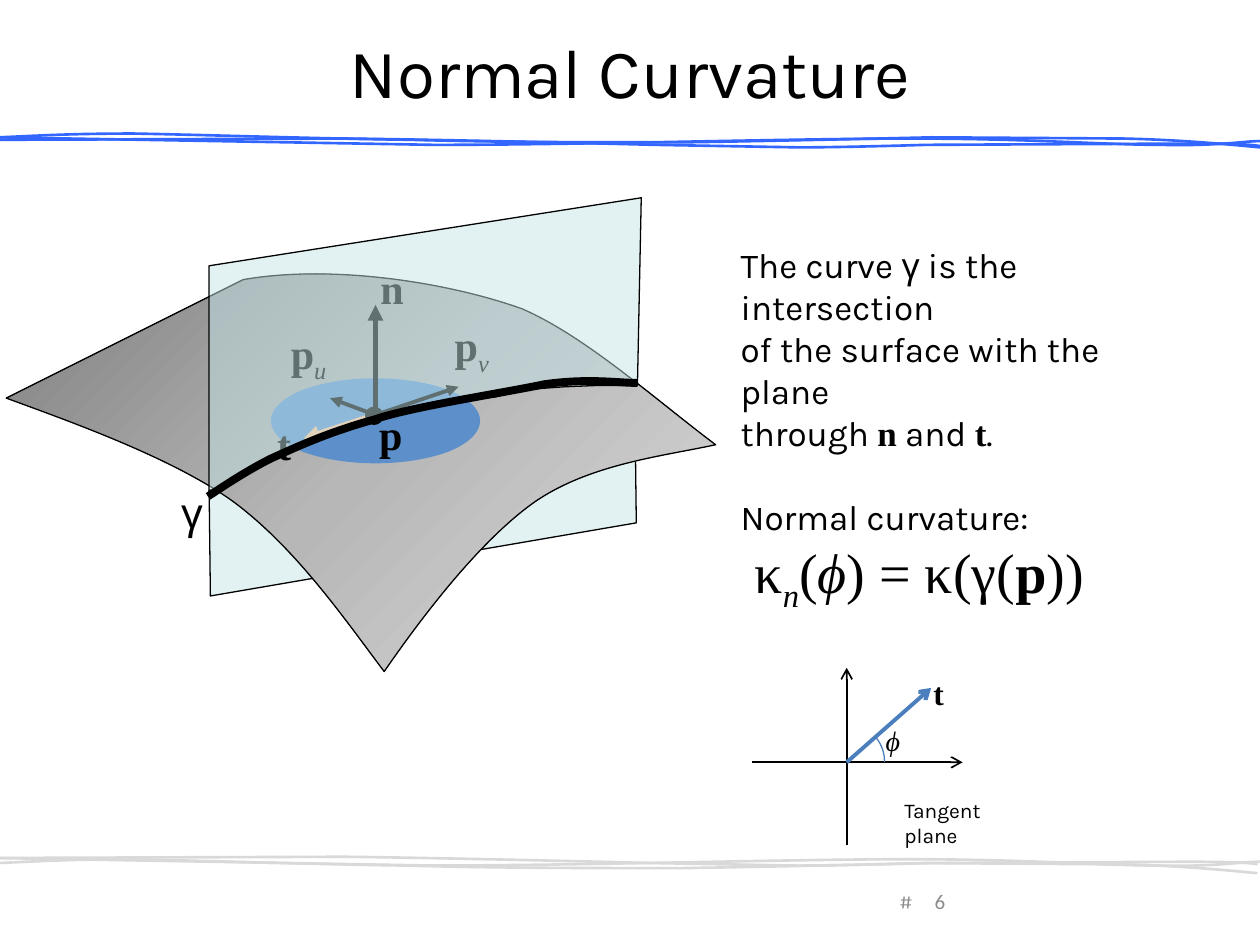
from dataclasses import dataclass
from lxml import etree
from pptx import Presentation
from pptx import util as u
from pptx.dml.color import RGBColor
from pptx.enum import shapes, text
from pptx.oxml.ns import qn


@dataclass(frozen=True)
class Theme:
    ink: str = "000000"
    rule: str = "3366FF"
    foot: str = "D9D9D9"
    mute: str = "8C8C8C"
    glass: str = "C5E5E8"
    disc: str = "5D90CB"
    tan: str = "FAC090"
    vec: str = "4B7EBC"
    shade: tuple = ((0, "808080"), (50, "B7B7B7"), (100, "D9D9D9"))
    sans: str = "Karla"
    serif: str = "Times New Roman"
    plain: str = "Calibri"
    head: float = 39.6
    math: int = 32
    mark: int = 24
    body: int = 20
    axis: int = 18
    angle: int = 16
    note: int = 12


T = Theme()
WIDE, HIGH = u.Inches(10), u.Inches(7.5)
CELL = WIDE / 10  # the grid has 10 columns and 7.5 rows

# Outlines: a start point, then lines (2 numbers) and curves (6 numbers)
WAVES = [  # each with the drop from the header to the footer
    (5.72, [(-0.01, 1.09), (3.44, 1.15), (4.65, 1.15, 6.27, 1.1, 7.23, 1.1),
            (8.19, 1.1, 8.76, 1.15, 9.22, 1.15),
            (9.68, 1.16, 9.87, 1.12, 10, 1.12),
            (10.13, 1.11, 10.06, 1.12, 9.99, 1.12)]),
    (5.76, [(-0.01, 1.09), (0.26, 1.08, 0.52, 1.06, 1.06, 1.06),
            (1.61, 1.07, 2.52, 1.1, 3.25, 1.11),
            (3.97, 1.13, 4.74, 1.13, 5.43, 1.13),
            (6.12, 1.12, 7.4, 1.09, 7.4, 1.09), (8.92, 1.1),
            (9.35, 1.11, 9.68, 1.14, 10, 1.17)]),
    (5.7, [(-0.02, 1.11), (2.75, 1.1), (3.62, 1.11, 5.2, 1.15, 5.2, 1.15),
           (6.34, 1.17), (6.7, 1.17, 7.35, 1.15, 7.35, 1.15),
           (9.43, 1.14), (9.87, 1.14, 9.94, 1.15, 10, 1.16)]),
]
LOWER = [(1.67, 4.73), (1.66, 3.89), (5.04, 3.29), (5.05, 4.15), (1.67, 4.73)]
SHEET = [(0.05, 3.16), (0.48, 3.32, 1.35, 3.62, 1.85, 3.98),
         (2.35, 4.35, 2.74, 4.92, 3.05, 5.33),
         (3.36, 4.88, 3.82, 4.28, 4.25, 3.98),
         (4.69, 3.68, 5.27, 3.62, 5.68, 3.53),
         (5.2, 3.17, 4.65, 2.67, 4.14, 2.45),
         (3.52, 2.23, 2.61, 2.1, 1.93, 2.22), (0.05, 3.16)]
UPPER = [(1.66, 2.11), (5.09, 1.57), (5.08, 2.07, 5.07, 2.56, 5.06, 3.06),
         (4.74, 3.06), (4.48, 3.07), (4.2, 3.09), (3.93, 3.15), (3.64, 3.18),
         (3.36, 3.24), (3.06, 3.32), (2.76, 3.41), (2.51, 3.5), (2.22, 3.61),
         (2.15, 3.65, 2.07, 3.68, 2, 3.71), (1.77, 3.85), (1.66, 3.91),
         (1.66, 2.11)]
GAMMA = [(1.65, 3.94), (1.73, 3.89, 1.93, 3.75, 2.15, 3.64),
         (2.37, 3.54, 2.61, 3.43, 2.97, 3.33),
         (3.26, 3.23, 3.99, 3.12, 4.32, 3.05),
         (4.67, 3, 4.91, 3.04, 5.06, 3.04)]


def at(*cells):
    return [u.Emu(round(c * CELL)) for c in cells]


def rgb(tone):
    return RGBColor.from_string(tone)


def sub(node, tag, **attrs):
    return etree.SubElement(node, qn(tag), **attrs)


def pairs(seg):
    return list(zip(seg[::2], seg[1::2]))


def shift(segs, dx, dy):
    return [tuple(n + (dy if i % 2 else dx) for i, n in enumerate(seg))
            for seg in segs]


def stroke(line, tone, wide):
    line.color.rgb = rgb(tone)
    line.width = u.Pt(wide)


def outline(sl, segs, fill=None, alpha=None, line=None, wide=0):
    """Draw a freeform, turning each three points of a curve into a Bezier."""
    pts = [at(*p) for seg in segs for p in pairs(seg)]
    pen = sl.shapes.build_freeform(*pts[0])
    pen.add_line_segments(pts[1:], close=segs[0] == segs[-1][-2:])
    shp = pen.convert_to_shape()
    shp.shadow.inherit = False
    steps = iter(shp._element.xpath(".//a:path/a:lnTo"))
    for seg in segs[1:]:
        first = next(steps)
        if len(seg) == 6:
            first.tag = qn("a:cubicBezTo")
            for _ in range(2):
                step = next(steps)
                first.append(step[0])
                step.getparent().remove(step)
    if fill:
        shp.fill.solid()
        shp.fill.fore_color.rgb = rgb(fill)
    else:
        shp.fill.background()
    if alpha:
        clr = shp._element.xpath("./p:spPr/a:solidFill/a:srgbClr")[0]
        sub(clr, "a:alpha", val=str(alpha * 1000))
    if line:
        stroke(shp.line, line, wide)
    else:
        shp.line.fill.background()
    return shp


def blend(shp, stops):
    """Fill with a slanted gradient of any number of stops."""
    shp.fill.gradient()
    shp.fill.gradient_angle = 315
    lst = shp._element.xpath("./p:spPr/a:gradFill/a:gsLst")[0]
    for gs in list(lst):
        lst.remove(gs)
    for pos, tone in stops:
        sub(sub(lst, "a:gs", pos=str(pos * 1000)), "a:srgbClr", val=tone)


def disc(sl, x, y, rx, ry, fill):
    a, b = 0.65, 0.28  # corner and handle, as shares of the radius
    unit = [(a, -a), (1, -b, 1, b, a, a), (b, 1, -b, 1, -a, a),
            (-1, b, -1, -b, -a, -a), (-b, -1, b, -1, a, -a)]
    sized = [tuple(n * (ry if i % 2 else rx) for i, n in enumerate(seg))
             for seg in unit]
    outline(sl, shift(sized, x, y), fill)


def arrow(sl, x1, y1, x2, y2, tone, wide, tip="triangle"):
    con = sl.shapes.add_connector(shapes.MSO_CONNECTOR.STRAIGHT,
                                  *at(x1, y1, x2, y2))
    stroke(con.line, tone, wide)
    sub(con.line._get_or_add_ln(), "a:tailEnd", type=tip)
    sub(con._element.spPr, "a:effectLst")


def words(sl, box, paras, wrap=False, inset=True, mid=False, side="LEFT"):
    """Each run is (words, size, font, marks, colour); None breaks the line."""
    tf = sl.shapes.add_textbox(*at(*box)).text_frame
    tf.word_wrap = wrap
    if mid:
        tf.vertical_anchor = text.MSO_ANCHOR.MIDDLE
    else:
        tf.auto_size = text.MSO_AUTO_SIZE.SHAPE_TO_FIT_TEXT
    if not inset:
        tf.margin_left = tf.margin_right = tf.margin_top = tf.margin_bottom = 0
    for i, (gap, runs) in enumerate(paras):
        par = tf.paragraphs[0] if i == 0 else tf.add_paragraph()
        par.alignment = getattr(text.PP_ALIGN, side)
        if gap:
            par.space_before = u.Pt(gap)
        for run in runs:
            if run is None:
                par.add_line_break()
            else:
                write(par, *run)


def write(par, body, size, face, marks="", tone=T.ink):
    run = par.add_run()
    run.text = body
    font = run.font
    font.size, font.name, font.color.rgb = u.Pt(size), face, rgb(tone)
    font.bold, font.italic = "b" in marks, "i" in marks
    if "s" in marks:
        font._element.set("baseline", "-25000")


def label(sl, box, *runs, **opts):
    words(sl, box, [(0, runs)], **opts)


def frame(sl):
    for dy, segs in WAVES:
        outline(sl, segs, line=T.rule, wide=1.5)
        outline(sl, shift(segs, -0.02, dy), line=T.foot, wide=1.5)
    label(sl, (0.5, 0.3, 9, 0.53), ("Normal Curvature", T.head, T.sans),
          wrap=True, mid=True, side="CENTER")
    label(sl, (7.04, 7, 0.3, 0.3), ("#", T.note, T.sans, "", T.mute),
          wrap=True, mid=True, side="CENTER")
    label(sl, (6.95, 6.95, 0.65, 0.4), ("6", T.note, T.plain, "", T.mute),
          wrap=True, mid=True, side="RIGHT")


def surface(sl):
    # Lower part of the plane, the sheet and its tangent disc
    outline(sl, LOWER, T.glass, 49, T.ink, 0.75)
    blend(outline(sl, SHEET, line=T.ink), T.shade)
    disc(sl, 2.98, 3.34, 0.91, 0.37, T.disc)
    # Vectors at the point
    arrow(sl, 2.98, 3.32, 2.98, 2.42, T.ink, 3)
    arrow(sl, 2.97, 3.29, 2.62, 3.16, T.ink, 2.25)
    arrow(sl, 3.02, 3.28, 3.64, 3.07, T.ink, 2.25)
    bold = (T.mark, T.serif, "b")
    label(sl, (3.02, 2.08, 0.23, 0.5), ("n", *bold), inset=False)
    label(sl, (2.91, 3.19, 0.39, 0.5), ("p", *bold))
    for x, y, sign in ((2.21, 2.55, "u"), (3.51, 2.49, "v")):
        label(sl, (x, y, 0.62, 0.63), ("p", *bold),
              (sign, T.mark, T.serif, "is"))
    arrow(sl, 2.95, 3.3, 2.41, 3.48, T.tan, 3)
    disc(sl, 2.97, 3.3, 0.08, 0.08, T.ink)
    label(sl, (2.2, 3.32, 0.11, 0.4), ("t", *bold), inset=False)
    # Upper part of the plane and the curve
    outline(sl, UPPER, T.glass, 49, T.ink, 0.75)
    outline(sl, GAMMA, line=T.ink, wide=4.5)
    label(sl, (1.34, 3.81, 0.34, 0.5), ("γ", T.mark, T.sans))


def story(sl):
    sans, bold = (T.body, T.sans), (T.body, T.serif, "b")
    eq = (T.math, T.serif)
    words(sl, (5.78, 1.88, 3.67, 2.32), [
        (0, [("The curve γ is the intersection ", *sans), None,
             ("of the surface with the plane ", *sans), None,
             ("through ", *sans), ("n", *bold), (" and ", *sans),
             ("t", *bold), (".", *sans)]),
        (24, [("Normal curvature:", *sans)]),
        (0, [(" κ", *eq), ("n", *eq, "is"), ("(", *eq), ("ϕ", *eq, "i"),
             (") = κ(γ(", *eq), ("p", *eq, "b"), ("))", *eq)]),
    ], wrap=True)


def axes(sl):
    x, y = 6.72, 6.05
    arrow(sl, x, 6.71, x, 5.3, T.ink, 1, "arrow")
    arrow(sl, 5.97, y, 7.64, y, T.ink, 1, "arrow")
    arrow(sl, x, y, 7.39, 5.46, T.vec, 2.25, "arrow")
    label(sl, (7.31, 5.3, 0.29, 0.4), ("t", T.axis, T.serif, "b"))
    arc = sl.shapes.add_shape(shapes.MSO_SHAPE.ARC, *at(6.44, 5.75, 0.58, 0.58))
    arc.adjustments[0], arc.adjustments[1] = 190.58, 0.75
    arc.shadow.inherit = False
    arc.fill.background()
    stroke(arc.line, T.vec, 0.75)
    label(sl, (6.93, 5.69, 0.39, 0.37), ("ϕ", T.angle, T.serif, "i"), wrap=True)
    label(sl, (7.08, 6.28, 1.26, 0.3), ("Tangent plane", T.note, T.sans),
          wrap=True)


def main():
    prs = Presentation()
    prs.slide_width, prs.slide_height = WIDE, HIGH
    sl = prs.slides.add_slide(prs.slide_layouts[6])
    for part in (frame, surface, story, axes):
        part(sl)
    prs.save("out.pptx")


if __name__ == "__main__":
    main()
